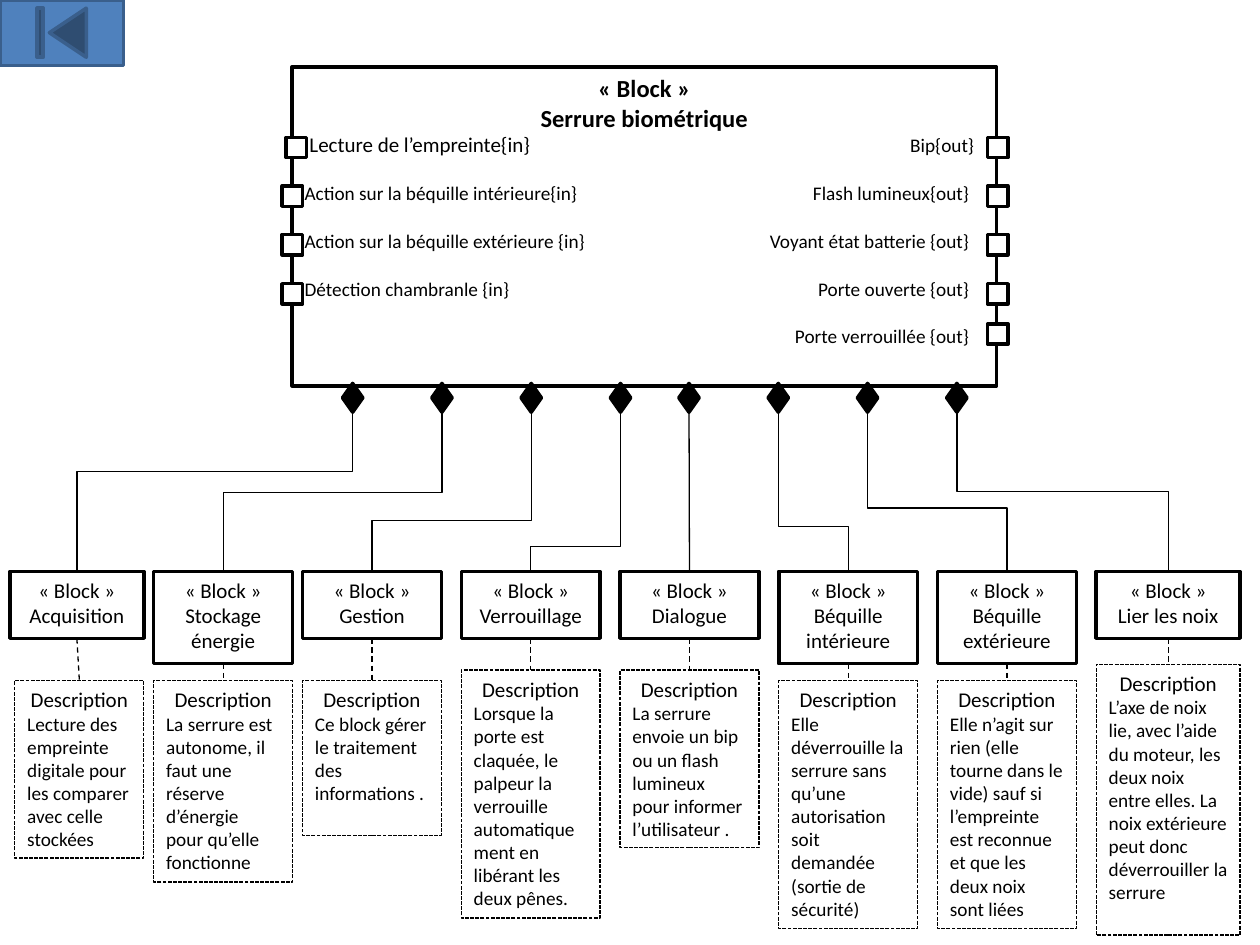
"""Build the block definition diagram of a biometric lock."""
from lxml import etree
from pptx import Presentation
from pptx.dml.color import RGBColor
from pptx.enum import dml, shapes, text
from pptx.oxml import ns
from pptx.util import Cm, Pt

BLACK = RGBColor(0x00, 0x00, 0x00)
WHITE = RGBColor(0xFF, 0xFF, 0xFF)
BLUE = RGBColor(0x4F, 0x81, 0xBD)
DARK_BLUE = RGBColor(0x3A, 0x5F, 0x8C)
FONT = "Calibri"
DASH = dml.MSO_LINE.DASH
SQUARE_DASH = dml.MSO_LINE.SQUARE_DOT
SHAPE = shapes.MSO_SHAPE
CONNECTOR = shapes.MSO_CONNECTOR

STEREOTYPE = "« Block »"
TITLE = "Serrure biométrique"
PORTS = [
    ("Lecture de l’empreinte{in}", "Bip{out}"),
    ("Action sur la béquille intérieure{in}", "Flash lumineux{out}"),
    ("Action sur la béquille extérieure {in}", "Voyant état batterie {out}"),
    ("Détection chambranle {in}", "Porte ouverte {out}"),
    ("", "Porte verrouillée {out}"),
]
PORT_TOPS = [2.77, 3.75, 4.73, 5.72, 6.53]

# name, description, left, width, height, elbow y, note top, note height
BLOCKS = [
    ("Acquisition", "Lecture des empreinte digitale pour les comparer avec celle stockées",
     0.2, 2.7, 1.35, 9.5, 13.72, 3.58),
    ("Stockage énergie", "La serrure est autonome, il faut une réserve d’énergie pour qu’elle fonctionne",
     3.1, 2.8, 1.86, 9.93, 13.72, 4.06),
    ("Gestion", "Ce block gérer le traitement des informations .",
     6.1, 2.8, 1.35, 10.5, 13.72, 3.12),
    ("Verrouillage", "Lorsque la porte est claquée, le palpeur la verrouille automatiquement "
     "en libérant les deux pênes.",
     9.3, 2.8, 1.35, 11.02, 13.51, 5),
    ("Dialogue", "La serrure envoie un bip ou un flash lumineux pour informer l’utilisateur .",
     12.5, 2.8, 1.35, None, 13.51, 3.58),
    ("Béquille intérieure", "Elle déverrouille la serrure sans qu’une autorisation soit demandée "
     "(sortie de sécurité)",
     15.7, 2.8, 1.86, 10.62, 13.72, 5),
    ("Béquille extérieure", "Elle n’agit sur rien (elle tourne dans le vide) sauf si l’empreinte "
     "est reconnue et que les deux noix sont liées",
     18.9, 2.8, 1.86, 10.24, 13.72, 5),
    ("Lier les noix", "L’axe de noix lie, avec l’aide du moteur, les deux noix entre elles. "
     "La noix extérieure peut donc déverrouiller la serrure",
     22.1, 2.9, 1.35, 9.91, 13.39, 5.46),
]
BLOCK_TOP = 11.52
MAIN = (5.89, 1.35, 14.2, 6.43)
PORT = 0.41
DIAMOND_TOP, DIAMOND_W, DIAMOND_H = 7.73, 0.41, 0.58
DIAMOND_STARTS, DIAMOND_STEP = (7.11, 13.89), 1.8


def add_shape(s, kind, left, top, width, height, fill=WHITE, line=BLACK, weight=2, dash=None):
    sp = s.shapes.add_shape(kind, Cm(left), Cm(top), Cm(width), Cm(height))
    sp.shadow.inherit = False
    sp.fill.solid()
    sp.fill.fore_color.rgb = fill
    sp.line.color.rgb = line
    sp.line.width = Pt(weight)
    if dash:
        sp.line.dash_style = dash
    sp.text_frame.word_wrap = True
    sp.text_frame.vertical_anchor = text.MSO_ANCHOR.TOP
    return sp


def add_text(sp, lines):
    tf = sp.text_frame
    for i, (words, size, bold, align) in enumerate(lines):
        p = tf.add_paragraph() if i else tf.paragraphs[0]
        p.alignment = align
        p.font.name, p.font.size, p.font.bold = FONT, Pt(size), bold
        p.font.color.rgb = BLACK
        p.add_run().text = words
    return tf


def add_line(s, kind, x1, y1, x2, y2, dash=None):
    c = s.shapes.add_connector(kind, Cm(x1), Cm(y1), Cm(x2), Cm(y2))
    c.line.color.rgb = BLACK
    c.line.width = Pt(0.75)
    if dash:
        c.line.dash_style = dash
    etree.SubElement(c._element.spPr, ns.qn("a:effectLst"))
    return c


def add_joined_line(s, upper, lower, dash=None):
    c = add_line(s, CONNECTOR.STRAIGHT, 0, 0, 1, 1, dash)
    c.begin_connect(upper, 2)
    c.end_connect(lower, 0)


def add_elbow(s, x1, y1, x2, y2, bend):
    cx, cy, dx, dy = (x1 + x2) / 2, (y1 + y2) / 2, x2 - x1, y2 - y1
    c = add_line(s, CONNECTOR.ELBOW, cx - dy / 2, cy + dx / 2, cx + dy / 2, cy - dx / 2)
    spPr = c._element.spPr
    spPr.find(ns.qn("a:xfrm")).set("rot", "5400000")
    guides = spPr.find(ns.qn("a:prstGeom")).find(ns.qn("a:avLst"))
    ratio = round((bend - y1) / dy * 100000)
    etree.SubElement(guides, ns.qn("a:gd"), name="adj1", fmla=f"val {ratio}")


def add_main_block(s):
    center, left = text.PP_ALIGN.CENTER, text.PP_ALIGN.LEFT
    sp = add_shape(s, SHAPE.RECTANGLE, *MAIN)
    lines = [(STEREOTYPE, 14, True, center), (TITLE, 14, True, center)]
    lines += [(f"{name_in}\t{name_out}", 11, False, left) for name_in, name_out in PORTS]
    tf = add_text(sp, lines)
    for i, p in enumerate(tf.paragraphs[2:]):
        p.space_before = Pt(14 if i else 0)
        pPr = p._p.get_or_add_pPr()
        tabs = etree.Element(ns.qn("a:tabLst"))
        etree.SubElement(tabs, ns.qn("a:tab"), pos=str(Cm(13.4)), algn="r")
        pPr.find(ns.qn("a:defRPr")).addprevious(tabs)
    p = tf.paragraphs[2]
    p._p.get_or_add_pPr().set("marL", str(Cm(0.1)))
    p.runs[0].text = PORTS[0][0]
    p.runs[0].font.size = Pt(12)
    p.add_run().text = "\t" + PORTS[0][1]
    for i, ((name_in, _), top) in enumerate(zip(PORTS, PORT_TOPS)):
        if name_in:
            add_shape(s, SHAPE.RECTANGLE, 5.69 if i else 5.77, top, PORT, PORT)
        add_shape(s, SHAPE.RECTANGLE, 19.91, top, PORT, PORT)


def add_part(s, i, name, description, left, width, height, bend, note_top, note_height):
    center = text.PP_ALIGN.CENTER
    x = DIAMOND_STARTS[i // 4] + DIAMOND_STEP * (i % 4)
    diamond = add_shape(s, SHAPE.DIAMOND, x - DIAMOND_W / 2, DIAMOND_TOP, DIAMOND_W, DIAMOND_H, BLACK)
    block = add_shape(s, SHAPE.RECTANGLE, left, BLOCK_TOP, width, height)
    add_text(block, [(STEREOTYPE, 12, False, center), (name, 12, False, center)])
    inset = 0 if i else 0.1
    note = add_shape(s, SHAPE.RECTANGLE, left + inset, note_top, width - inset, note_height,
                     weight=0.75, dash=SQUARE_DASH)
    add_text(note, [("Description", 12, False, center), (description, 11, False, text.PP_ALIGN.LEFT)])
    add_joined_line(s, block, note, DASH)
    if bend:
        add_elbow(s, x, DIAMOND_TOP + DIAMOND_H, left + width / 2, BLOCK_TOP, bend)
    else:
        add_joined_line(s, diamond, block)


def main():
    prs = Presentation()
    prs.slide_width, prs.slide_height = Cm(25.4), Cm(19.05)
    s = prs.slides.add_slide(prs.slide_layouts[6])
    add_main_block(s)
    for i, part in enumerate(BLOCKS):
        add_part(s, i, *part)
    add_shape(s, SHAPE.ACTION_BUTTON_BEGINNING, 0, 0, 2.49, 1.32, BLUE, DARK_BLUE)
    prs.save("out.pptx")


if __name__ == "__main__":
    main()
